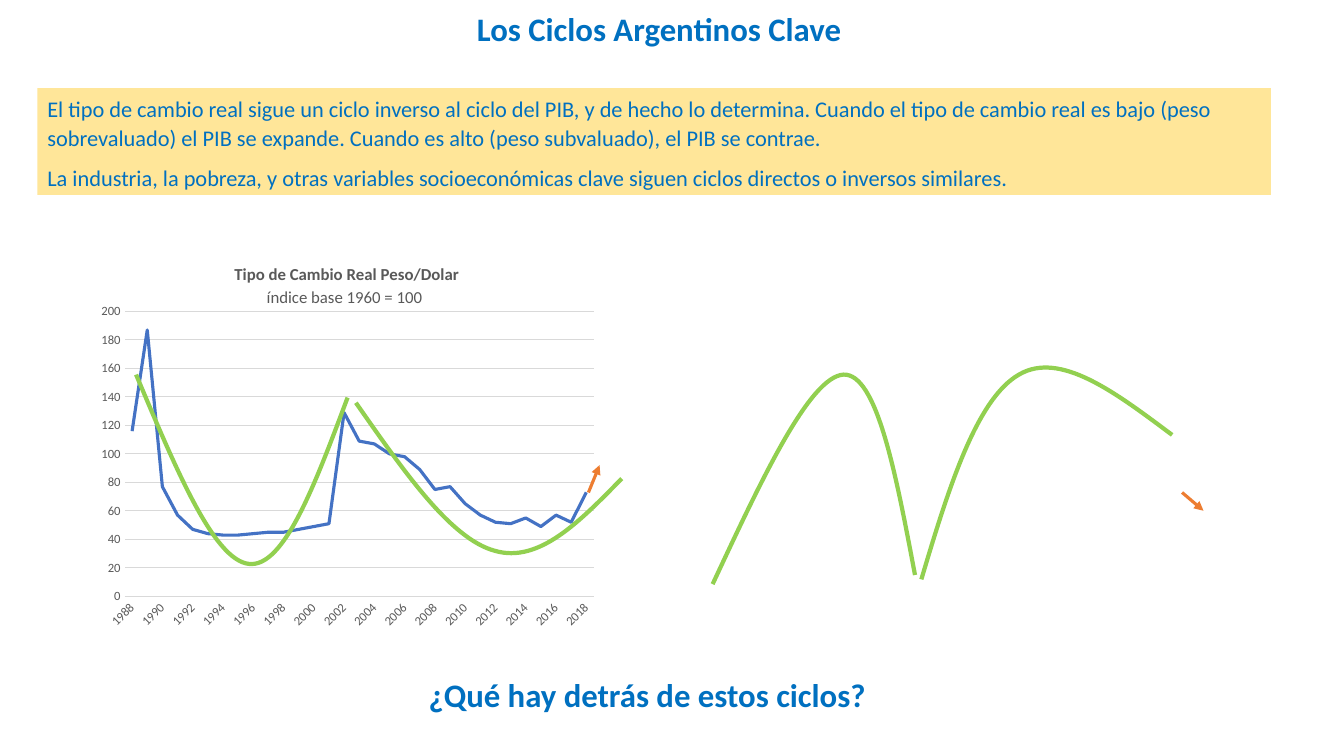
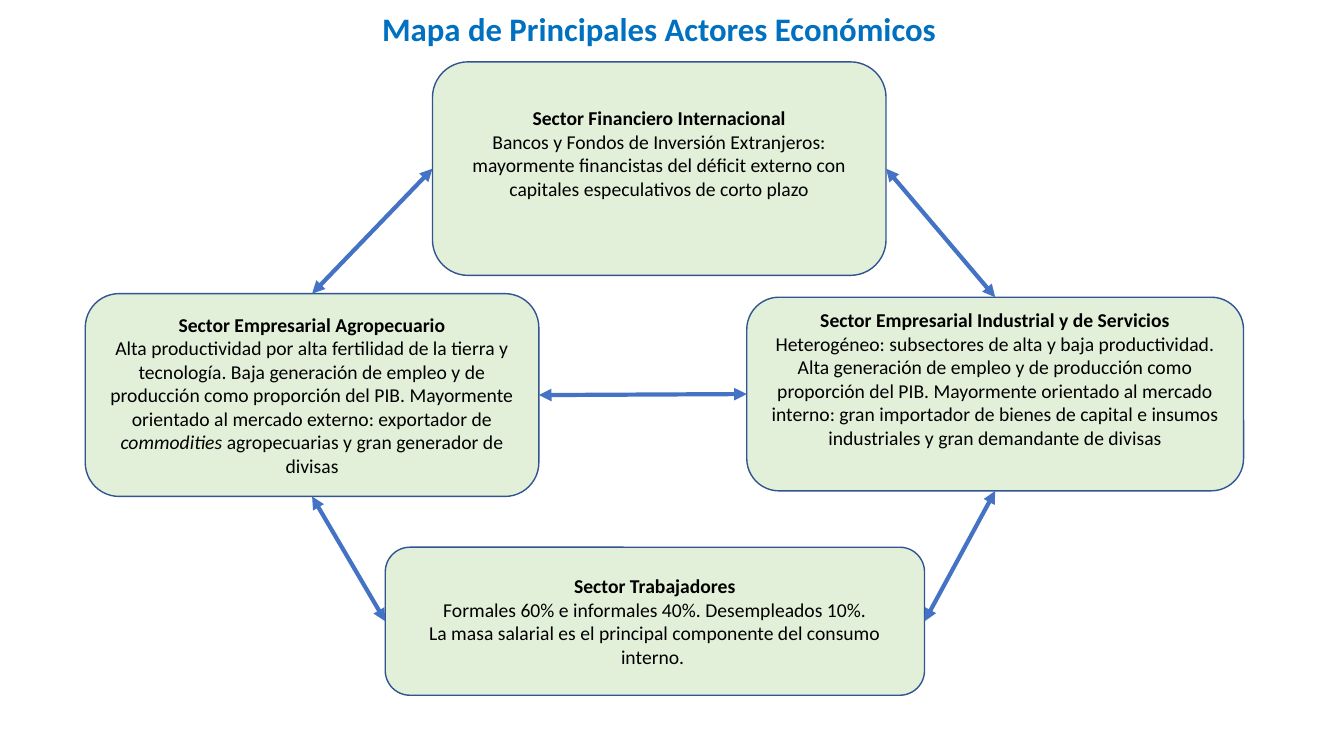
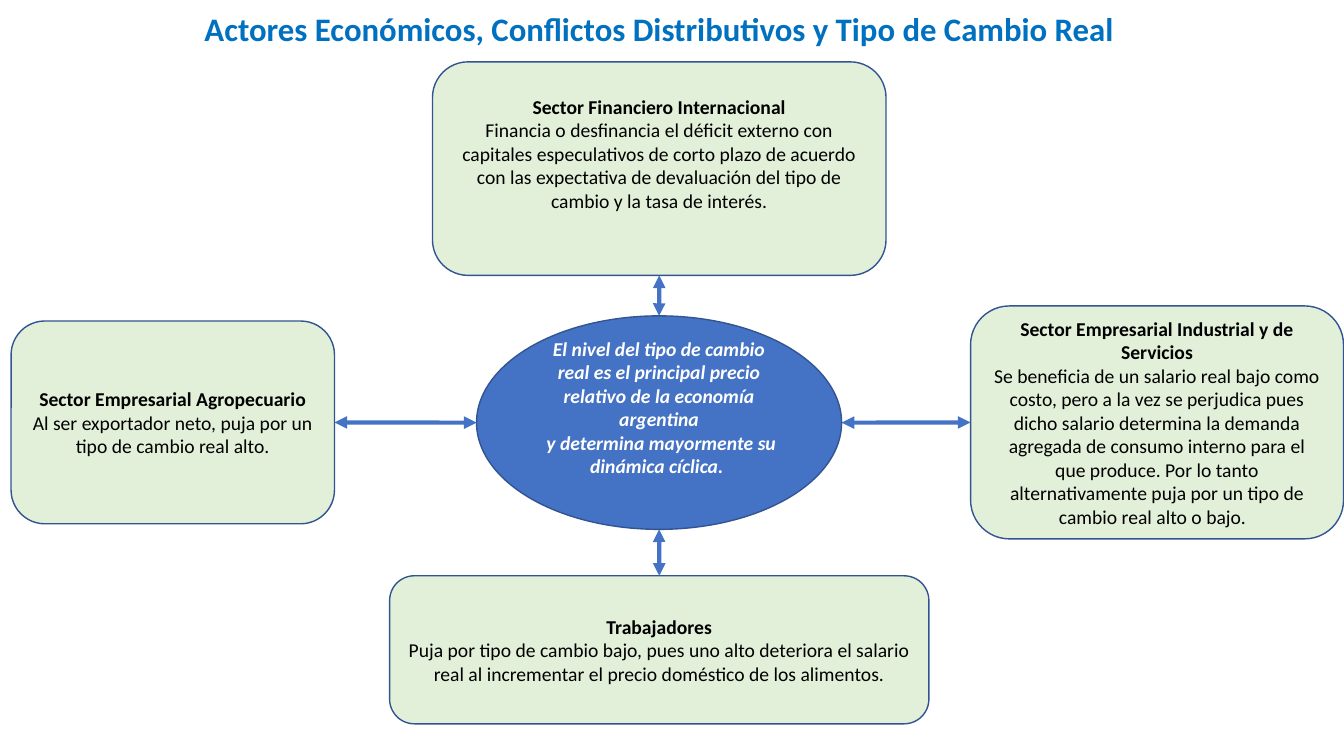
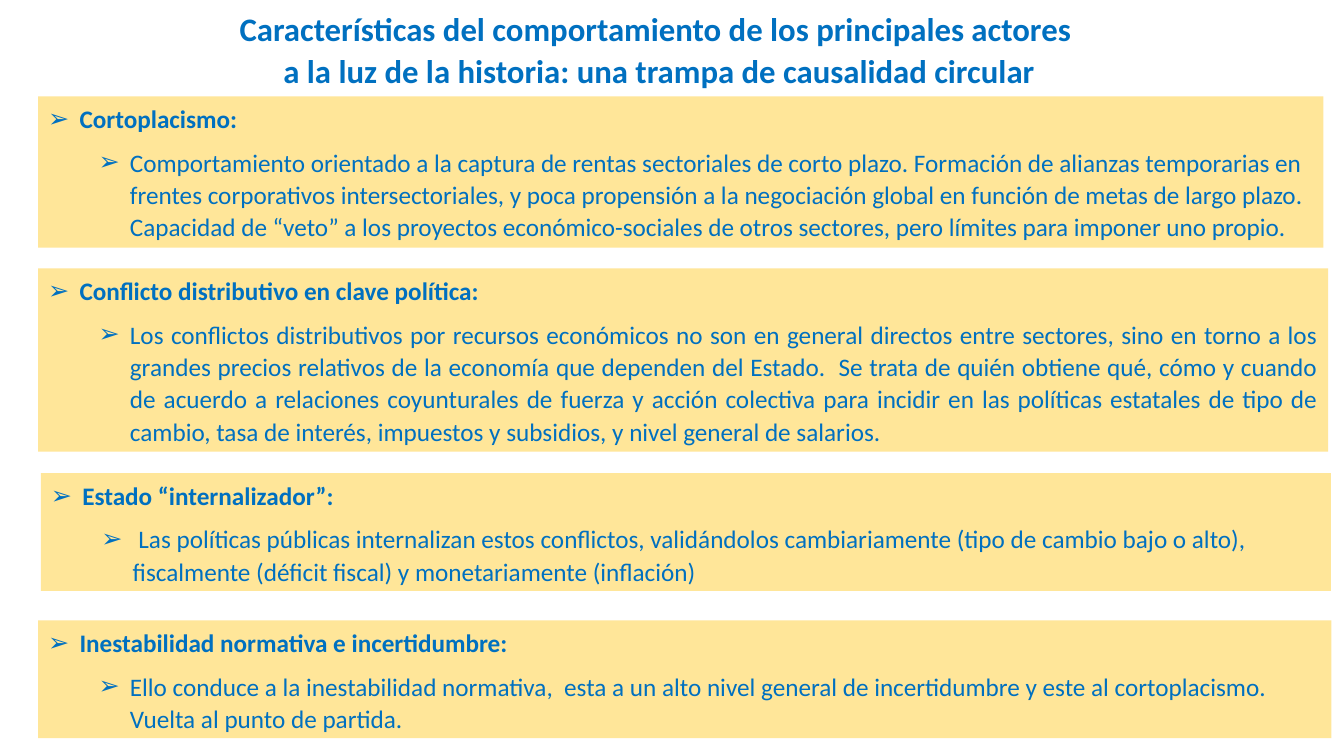
from typing import NamedTuple

from lxml import etree
from pptx import Presentation
from pptx.chart.data import CategoryChartData
from pptx.dml.color import RGBColor
from pptx.enum.chart import XL_CHART_TYPE, XL_TICK_MARK
from pptx.enum.shapes import MSO_CONNECTOR, MSO_SHAPE
from pptx.enum.text import MSO_ANCHOR, MSO_AUTO_SIZE, PP_ALIGN
from pptx.oxml.ns import qn
from pptx.util import Cm, Pt

LINE_CHART = XL_CHART_TYPE.LINE
NO_TICK = XL_TICK_MARK.NONE
STRAIGHT = MSO_CONNECTOR.STRAIGHT
ROUNDED, OVAL = MSO_SHAPE.ROUNDED_RECTANGLE, MSO_SHAPE.FLOWCHART_CONNECTOR
TOP, MIDDLE = MSO_ANCHOR.TOP, MSO_ANCHOR.MIDDLE
NO_FIT = MSO_AUTO_SIZE.NONE
LEFT, CENTER, JUSTIFY = PP_ALIGN.LEFT, PP_ALIGN.CENTER, PP_ALIGN.JUSTIFY
SIDE_TOP, SIDE_LEFT, SIDE_BOTTOM, SIDE_RIGHT = range(4)
CONTENT_LAYOUT, COMPARISON_LAYOUT, TITLE_LAYOUT = 1, 4, 5

FONT = "Calibri"
HEADING, BANNER, CARD, OUTLINE = "0070C0", "FFE699", "E2F0D9", "325491"
BLUE, GREEN, ORANGE = "4472C4", "92D050", "ED7D31"
GRID, LABEL, BLACK, WHITE = "D9D9D9", "595959", "000000", "FFFFFF"

YEARS = [str(year) for year in range(1988, 2019)]
RATES = [116, 187, 77, 57, 47, 44, 43, 43, 44, 45, 45, 47, 49, 51, 129, 109,
         107, 100, 98, 89, 75, 77, 65, 57, 52, 51, 55, 49, 57, 52, 73]
RATE_TRENDS = [
    [(1.3, 3.25), (2.29, 5.59), (3.25, 7.92), (4.14, 8.02),
     (5.03, 8.13), (5.82, 5.99), (6.63, 3.83)],
    [(6.84, 3.96), (8.03, 5.66), (9.22, 7.39), (10.34, 7.69),
     (11.46, 8.02), (12.5, 6.93), (13.54, 5.87)],
]
OUTPUT_TRENDS = [
    [(5.26, 8.41), (5.94, 6.12), (6.65, 3.86), (7.72, 3.25),
     (8.76, 2.64), (10.16, 3.71), (11.58, 4.77)],
    [(0, 8.53), (1.22, 5.92), (2.44, 3.3), (3.3, 3.25),
     (4.14, 3.22), (4.62, 5.76), (5.1, 8.3)],
]


class Box(NamedTuple):
    """A rectangle on the page, in centimetres."""
    left: float
    top: float
    width: float
    height: float

    def lengths(self):
        """Return the four measures as slide lengths."""
        return [Cm(value) for value in self]

    def side(self, index):
        """Return the middle of a side, numbered like connection sites."""
        across, down = [(0.5, 0), (0, 0.5), (0.5, 1), (1, 0.5)][index]
        return self.left + across * self.width, self.top + down * self.height


FINANCE_BOX = Box(10.9, 1.56, 11.43, 5.38)


def color(code):
    """Turn a hex string into a colour."""
    return RGBColor.from_string(code)


def style_font(font, size, code, bold=False, italic=False):
    """Give a font its face, size, colour and weight."""
    font.name, font.size = FONT, Pt(size)
    font.bold, font.italic = bold, italic
    font.color.rgb = color(code)


def add_span(para, text, size, code, bold=False, italic=False):
    """Add one formatted run."""
    span = para.add_run()
    span.text = text
    style_font(span.font, size, code, bold, italic)


def add_paras(frame, count):
    """Return the given number of paragraphs of an empty frame."""
    return [frame.paragraphs[0]] + [frame.add_paragraph() for _ in range(count - 1)]


def place(shape, box):
    """Move a placeholder onto a box."""
    shape.left, shape.top, shape.width, shape.height = box.lengths()


def write_heading(shape, lines):
    """Write centred blue heading lines."""
    frame = shape.text_frame
    frame.word_wrap, frame.auto_size = True, NO_FIT
    frame.vertical_anchor = TOP
    for para, line in zip(add_paras(frame, len(lines)), lines):
        para.alignment = CENTER
        para.line_spacing, para.space_before = 0.7, Pt(10)
        add_span(para, line, 23.4, HEADING, bold=True)


def new_page(deck, layout, *title):
    """Add a page with its title."""
    page = deck.slides.add_slide(deck.slide_layouts[layout])
    place(page.shapes.title, Box(3.91, 0.37, 25.4, 1.04 if len(title) == 1 else 2.24))
    write_heading(page.shapes.title, title)
    return page


def set_bullet(para, indent):
    """Give a paragraph an arrow bullet, or none when there is no indent."""
    props = para._p.get_or_add_pPr()
    hanging = Cm(0.79) if indent else 0
    props.set("marL", str(Cm(indent)))
    props.set("indent", str(-hanging))
    if indent:
        etree.SubElement(props, qn("a:buFont")).set("typeface", "Arial")
        etree.SubElement(props, qn("a:buChar")).set("char", "➢")
    else:
        etree.SubElement(props, qn("a:buNone"))


def fill_banner(shape, box, size, items):
    """Turn a body placeholder into a banner of (text, bold, indent, alignment)."""
    place(shape, box)
    shape.fill.solid()
    shape.fill.fore_color.rgb = color(BANNER)
    frame = shape.text_frame
    frame.word_wrap, frame.auto_size = True, NO_FIT
    frame.vertical_anchor = TOP
    for para, (text, bold, indent, alignment) in zip(add_paras(frame, len(items)), items):
        para.alignment = alignment
        para.line_spacing = 1.07
        para.space_before, para.space_after = Pt(0), Pt(8)
        para.level = 1 if indent > 1 else 0
        set_bullet(para, indent)
        add_span(para, text, size, HEADING, bold)


def style_line(shape, code, width):
    """Set the colour and width of a line."""
    shape.line.color.rgb = color(code)
    shape.line.width = Pt(width)


def add_arrow(page, start, end, code, width, both=False):
    """Draw a straight arrow between two points."""
    points = [Cm(value) for value in (*start, *end)]
    arrow = page.shapes.add_connector(STRAIGHT, *points)
    style_line(arrow, code, width)
    outline = arrow.line._get_or_add_ln()
    for tag in ["a:headEnd", "a:tailEnd"] if both else ["a:tailEnd"]:
        etree.SubElement(outline, qn(tag)).set("type", "triangle")
    etree.SubElement(arrow._element.spPr, qn("a:effectLst"))
    return arrow


def link_cards(page, first, first_side, second, second_side):
    """Join two cards with a double arrow."""
    arrow = add_arrow(page, (0, 0), (1, 1), BLUE, 3, both=True)
    arrow.begin_connect(first, first_side)
    arrow.end_connect(second, second_side)


def add_node(page, kind, box, fill, lift):
    """Draw an outlined shape; lift raises its text by extra bottom margin."""
    node = page.shapes.add_shape(kind, *box.lengths())
    node.shadow.inherit = False
    node.fill.solid()
    node.fill.fore_color.rgb = color(fill)
    style_line(node, OUTLINE, 1)
    frame = node.text_frame
    frame.word_wrap, frame.vertical_anchor = True, MIDDLE
    if lift:
        frame.margin_bottom = Cm(0.9)
    return node


def add_card(page, box, name, *lines, lift=False):
    """Draw an actor card; a line is a text or a list of (text, italic) parts."""
    card = add_node(page, ROUNDED, box, CARD, lift)
    heading, *rest = add_paras(card.text_frame, len(lines) + 1)
    heading.alignment = CENTER
    add_span(heading, name, 14, BLACK, bold=True)
    for para, line in zip(rest, lines):
        para.alignment = CENTER
        for text, italic in [(line, False)] if isinstance(line, str) else line:
            add_span(para, text, 14, BLACK, italic=italic)
    return card


def add_curve(page, points):
    """Draw an open chain of cubic curves through every third point."""
    points = [(Cm(x), Cm(y)) for x, y in points]
    builder = page.shapes.build_freeform(*points[0])
    builder.add_line_segments(points[3::3], close=False)
    curve = builder.convert_to_shape()
    curve.shadow.inherit = False
    curve.fill.background()
    style_line(curve, GREEN, 3)
    for index, segment in enumerate(list(curve._element.iter(qn("a:lnTo")))):
        bend = segment.makeelement(qn("a:cubicBezTo"))
        for x, y in points[3 * index + 1:3 * index + 4]:
            etree.SubElement(bend, qn("a:pt"), x=str(x - curve.left), y=str(y - curve.top))
        segment.getparent().replace(segment, bend)


def add_trends(page, box, curves, arrow):
    """Draw the green cycles and the closing arrow of one panel."""
    def shift(point):
        return box.left + point[0], box.top + point[1]

    for curve in curves:
        add_curve(page, [shift(point) for point in curve])
    add_arrow(page, shift(arrow[0]), shift(arrow[1]), ORANGE, 2.25)


def set_layout(parent, position, settings):
    """Put a manual layout on a chart part."""
    for old in parent.findall(qn("c:layout")):
        parent.remove(old)
    layout = parent.makeelement(qn("c:layout"))
    parent.insert(position, layout)
    manual = etree.SubElement(layout, qn("c:manualLayout"))
    for tag, value in settings.items():
        etree.SubElement(manual, qn("c:" + tag)).set("val", str(value))


def add_rate_chart(page, box):
    """Draw the exchange rate line chart."""
    data = CategoryChartData()
    data.categories = YEARS
    data.add_series("Series 1", RATES)
    chart = page.shapes.add_chart(LINE_CHART, *box.lengths(), data).chart
    style_font(chart.font, 10, BLACK)
    chart.has_legend = False
    chart.has_title = True
    name, unit = add_paras(chart.chart_title.text_frame, 2)
    add_span(name, "Tipo de Cambio Real Peso/Dolar", 12, LABEL, bold=True)
    add_span(unit, "índice base 1960 = 100", 12, LABEL)
    add_span(unit, " ", 14, LABEL)
    modes = {"xMode": "edge", "yMode": "edge"}
    set_layout(chart.chart_title._element, 1,
               {**modes, "x": 3.7 / box.width, "y": 0.35 / box.height})
    plot = Box(1.01, 1.66, 11.83, 7.18)
    set_layout(chart._chartSpace.chart.plotArea, 0,
               {"layoutTarget": "inner", **modes,
                "x": plot.left / box.width, "y": plot.top / box.height,
                "w": plot.width / box.width, "h": plot.height / box.height})

    years, values = chart.category_axis, chart.value_axis
    for axis in (years, values):
        axis.major_tick_mark = axis.minor_tick_mark = NO_TICK
        style_font(axis.tick_labels.font, 9, LABEL)
    style_line(years.format, GRID, 0.75)
    years._element.txPr.bodyPr.set("rot", "-2700000")
    skip = years._element.makeelement(qn("c:tickLblSkip"), {"val": "2"})
    years._element.find(qn("c:lblOffset")).addnext(skip)
    values.minimum_scale, values.maximum_scale, values.major_unit = 0, 200, 20
    values.format.line.fill.background()
    style_line(values.major_gridlines.format, GRID, 0.75)

    series = chart.plots[0].series[0]
    series.smooth = False
    style_line(series.format, BLUE, 2.25)


def build_cycles(deck):
    """Build the page of key cycles."""
    page = new_page(deck, CONTENT_LAYOUT, "Los Ciclos Argentinos Clave")
    fill_banner(page.placeholders[1], Box(0.94, 2.22, 31.09, 2.69), 16, [
        ("El tipo de cambio real sigue un ciclo inverso al ciclo del PIB, y de hecho lo "
         "determina. Cuando el tipo de cambio real es bajo (peso sobrevaluado) el PIB se "
         "expande. Cuando es alto (peso subvaluado), el PIB se contrae.", False, 0, LEFT),
        ("La industria, la pobreza, y otras variables socioeconómicas clave siguen ciclos "
         "directos o inversos similares.", False, 0, LEFT),
    ])
    rate_box = Box(2.13, 6.19, 13.23, 9.91)
    add_rate_chart(page, rate_box)
    add_trends(page, rate_box, RATE_TRENDS, [(12.7, 6.22), (12.98, 5.53)])
    output_box = rate_box._replace(left=17.96)
    add_trends(page, output_box, OUTPUT_TRENDS, [(11.83, 6.22), (12.37, 6.68)])
    question = page.shapes.add_textbox(*Box(3.61, 17.15, 25.4, 1.04).lengths())
    write_heading(question, ["¿Qué hay detrás de estos ciclos?"])


def build_actor_map(deck):
    """Build the map of economic actors."""
    page = new_page(deck, TITLE_LAYOUT, "Mapa de Principales Actores Económicos")
    farming = add_card(
        page, Box(2.15, 7.4, 11.43, 5.11), "Sector Empresarial Agropecuario",
        [("Alta productividad por alta fertilidad de la tierra y tecnología. Baja "
          "generación de empleo y de producción como proporción del PIB. Mayormente "
          "orientado al mercado externo: exportador de ", False),
         ("commodities", True),
         (" agropecuarias y gran generador de divisas", False)])
    industry = add_card(
        page, Box(18.82, 7.49, 12.52, 4.88), "Sector Empresarial Industrial y de Servicios",
        "Heterogéneo: subsectores de alta y baja productividad. Alta generación de empleo "
        "y de producción como proporción del PIB. Mayormente orientado al mercado interno: "
        "gran importador de bienes de capital e insumos industriales y gran demandante de "
        "divisas", lift=True)
    workers = add_card(
        page, Box(9.71, 13.79, 13.59, 3.73), "Sector Trabajadores",
        "Formales 60% e informales 40%. Desempleados 10%.",
        "La masa salarial es el principal componente del consumo interno. ")
    finance = add_card(
        page, FINANCE_BOX, "Sector Financiero Internacional",
        "Bancos y Fondos de Inversión Extranjeros: mayormente financistas del déficit "
        "externo con capitales especulativos de corto plazo", lift=True)
    for link in [(farming, SIDE_BOTTOM, workers, SIDE_LEFT),
                 (finance, SIDE_LEFT, farming, SIDE_TOP),
                 (finance, SIDE_RIGHT, industry, SIDE_TOP),
                 (farming, SIDE_RIGHT, industry, SIDE_LEFT),
                 (industry, SIDE_BOTTOM, workers, SIDE_RIGHT)]:
        link_cards(page, *link)


def add_hub(page, box):
    """Draw the central oval."""
    hub = add_node(page, OVAL, box, BLUE, lift=True)
    lines = ["El nivel del tipo de cambio real es el principal precio relativo de la "
             "economía argentina",
             " y determina mayormente su dinámica cíclica. "]
    for para, line in zip(add_paras(hub.text_frame, len(lines)), lines):
        para.alignment = CENTER
        add_span(para, line, 14, WHITE, bold=True, italic=True)


def build_conflicts(deck):
    """Build the page of conflicts around the exchange rate."""
    page = new_page(deck, TITLE_LAYOUT,
                    "Actores Económicos, Conflictos Distributivos y Tipo de Cambio Real")
    farming = add_card(
        page, Box(0.28, 8.09, 8.15, 5.11), "Sector Empresarial Agropecuario",
        "Al ser exportador neto, puja por un tipo de cambio real alto.")
    industry = add_card(
        page, Box(24.46, 7.71, 9.4, 5.87), "Sector Empresarial Industrial y de Servicios",
        "Se beneficia de un salario real bajo como costo, pero a la vez se perjudica pues "
        "dicho salario determina la demanda agregada de consumo interno para el que "
        "produce. Por lo tanto alternativamente puja por un tipo de cambio real alto o "
        "bajo.  ")
    workers = add_card(
        page, Box(9.82, 14.51, 13.59, 3.73), "Trabajadores",
        "Puja por tipo de cambio bajo, pues uno alto deteriora el salario real al "
        "incrementar el precio doméstico de los alimentos.")
    finance = add_card(
        page, FINANCE_BOX, "Sector Financiero Internacional",
        "Financia o desfinancia el déficit externo con capitales especulativos de corto "
        "plazo de acuerdo con las expectativa de devaluación del tipo de cambio y la tasa "
        "de interés.", lift=True)
    hub_box = Box(12.01, 7.96, 9.2, 5.38)
    for card, card_side, hub_side in [(farming, SIDE_RIGHT, SIDE_LEFT),
                                      (finance, SIDE_BOTTOM, SIDE_TOP),
                                      (industry, SIDE_LEFT, SIDE_RIGHT),
                                      (workers, SIDE_TOP, SIDE_BOTTOM)]:
        hub_point = hub_box.side(hub_side)
        arrow = add_arrow(page, hub_point, hub_point, BLUE, 3, both=True)
        arrow.end_connect(card, card_side)
    add_hub(page, hub_box)


def build_behaviour(deck):
    """Build the page of behaviour traits."""
    page = new_page(deck, COMPARISON_LAYOUT,
                    "Características del comportamiento de los principales actores ",
                    "a la luz de la historia: una trampa de causalidad circular")
    traits = [
        (Box(0.96, 2.43, 32.39, 3.81), LEFT, "Cortoplacismo:",
         "Comportamiento orientado a la captura de rentas sectoriales de corto plazo. "
         "Formación de alianzas temporarias en frentes corporativos intersectoriales, y "
         "poca propensión a la negociación global en función de metas de largo plazo. "
         "Capacidad de “veto” a los proyectos económico-sociales de otros sectores, pero "
         "límites para imponer uno propio."),
        (Box(0.96, 6.76, 32.51, 4.62), JUSTIFY, "Conflicto distributivo en clave política:",
         "Los conflictos distributivos por recursos económicos no son en general directos "
         "entre sectores, sino en torno a los grandes precios relativos de la economía que "
         "dependen del Estado.  Se trata de quién obtiene qué, cómo y cuando de acuerdo a "
         "relaciones coyunturales de fuerza y acción colectiva para incidir en las "
         "políticas estatales de tipo de cambio, tasa de interés, impuestos y subsidios, y "
         "nivel general de salarios."),
        (Box(1.03, 11.92, 32.51, 2.97), LEFT, "Estado “internalizador”:",
         " Las políticas públicas internalizan estos conflictos, validándolos "
         "cambiariamente (tipo de cambio bajo o alto), fiscalmente (déficit fiscal) y "
         "monetariamente (inflación)"),
        (Box(0.96, 15.63, 32.59, 2.97), LEFT, "Inestabilidad normativa e incertidumbre:",
         "Ello conduce a la inestabilidad normativa,  esta a un alto nivel general de "
         "incertidumbre y este al cortoplacismo. Vuelta al punto de partida."),
    ]
    for index, (box, alignment, name, text) in enumerate(traits, start=1):
        fill_banner(page.placeholders[index], box, 18,
                    [(name, True, 0.79, LEFT), (text, False, 2.06, alignment)])


def main():
    """Build and save the deck."""
    deck = Presentation()
    deck.slide_width, deck.slide_height = Cm(33.87), Cm(19.05)
    build_cycles(deck)
    build_actor_map(deck)
    build_conflicts(deck)
    build_behaviour(deck)
    deck.save("out.pptx")


if __name__ == "__main__":
    main()
